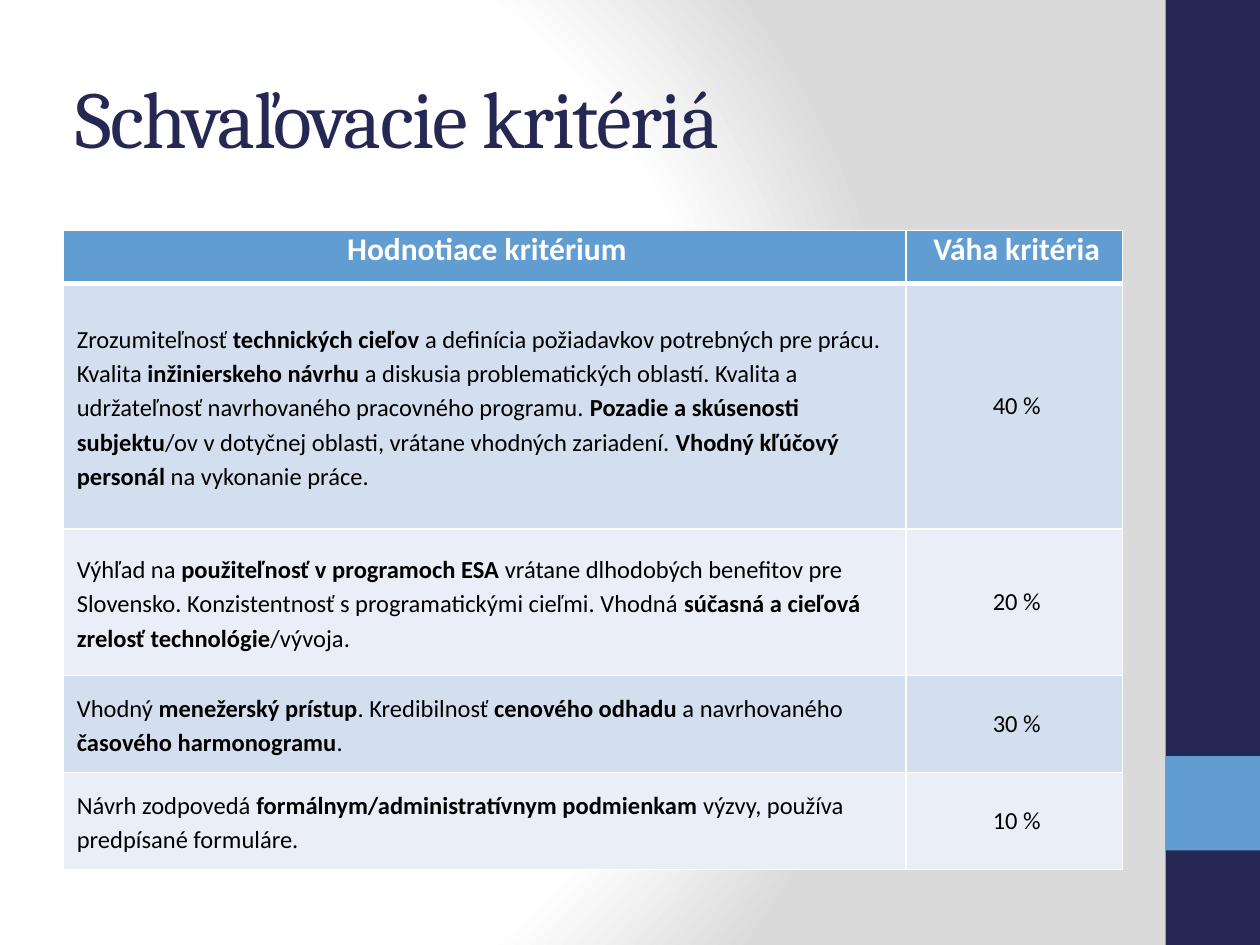
from pptx import Presentation
from pptx.dml.color import RGBColor as RGB
from pptx.enum.shapes import MSO_SHAPE as Shape
from pptx.enum.text import MSO_ANCHOR as Anchor, PP_ALIGN as Align
from pptx.oxml import parse_xml
from pptx.oxml.ns import nsdecls
from pptx.util import Inches, Pt

THEME = {
    "navy": "242852", "blue": "629DD1", "white": "FFFFFF", "black": "000000",
    "grey": "DADADA", "bands": ("D3DFEE", "EAEFF7"),
    "serif": "Cambria", "sans": "Calibri",
    "title": 46, "head": 18, "body": 14,
}

# Asterisks enclose the bold words
ROWS = [
    ("*Hodnotiace kritérium*", "*Váha kritéria*"),
    ("Zrozumiteľnosť *technických cieľov *a definícia požiadavkov potrebných pre prácu. "
     "Kvalita *inžinierskeho návrhu *a diskusia problematických oblastí. Kvalita a "
     "udržateľnosť navrhovaného pracovného programu. *Pozadie a skúsenosti subjektu*"
     "/ov v dotyčnej oblasti, vrátane vhodných zariadení. *Vhodný kľúčový personál *"
     "na vykonanie práce.", "40 %"),
    ("Výhľad na *použiteľnosť v programoch ESA *vrátane dlhodobých benefitov pre "
     "Slovensko. Konzistentnosť s programatickými cieľmi. Vhodná *súčasná a cieľová "
     "zrelosť technológie*/vývoja.", "20 %"),
    ("Vhodný *menežerský prístup*. Kredibilnosť *cenového odhadu* a navrhovaného "
     "*časového harmonogramu*.", "30 %"),
    ("Návrh zodpovedá *formálnym/administratívnym podmienkam *výzvy, používa "
     "predpísané formuláre.", "10 %"),
]
WIDTHS = (26.76, 6.88)
HEIGHTS = (1.68, 7.8, 4.64, 3.08, 3.08)

prs = Presentation()
prs.slide_width, prs.slide_height = Inches(10), Inches(7.5)
UNIT = prs.slide_width / 40  # grid of 40 columns and 30 rows


def grid(*spans):
    return [round(n * UNIT) for n in spans]


def write(para, text, font, size, color):
    for i, part in enumerate(text.split("*")):
        if part:
            run = para.add_run()
            run.text = part
            look = {"name": font, "size": Pt(size), "bold": i % 2 == 1}
            for key, val in look.items():
                setattr(run.font, key, val)
            run.font.color.rgb = RGB.from_string(color)


slide = prs.slides.add_slide(prs.slide_layouts[5])

# Background: round gradient
stops = "".join(
    f'<a:gs pos="{pos}"><a:srgbClr val="{THEME[name]}"/></a:gs>'
    for pos, name in ((0, "white"), (75000, "white"), (100000, "grey")))
slide.element.cSld.insert(0, parse_xml(
    f'<p:bg {nsdecls("p", "a")}><p:bgPr><a:gradFill rotWithShape="1">'
    f'<a:gsLst>{stops}</a:gsLst><a:path path="circle">'
    '<a:fillToRect l="20000" t="50000" r="100000" b="50000"/></a:path>'
    '</a:gradFill><a:effectLst/></p:bgPr></p:bg>'))

# Side bar and its accent
for top, tall, name in ((0, 30, "navy"), (24, 3, "blue")):
    bar = slide.shapes.add_shape(Shape.RECTANGLE, *grid(37, top, 3, tall))
    bar.shadow.inherit = False
    bar.fill.solid()
    bar.fill.fore_color.rgb = RGB.from_string(THEME[name])
    bar.line.fill.background()

# Title, in front of the bars
title = slide.shapes.title
slide.shapes._spTree.append(title._element)
title.left, title.top, title.width, title.height = grid(2, 1.2, 33.32, 5)
frame = title.text_frame
frame.word_wrap = True
frame.vertical_anchor = Anchor.MIDDLE
para = frame.paragraphs[0]
para.alignment = Align.LEFT
write(para, "Schvaľovacie kritériá", THEME["serif"], THEME["title"], THEME["navy"])
para.runs[0].font._element.set("spc", "-100")

# Criteria table
table = slide.shapes.add_table(
    len(ROWS), len(WIDTHS), *grid(2, 7.32, sum(WIDTHS), sum(HEIGHTS))).table
for col, wide in zip(table.columns, grid(*WIDTHS)):
    col.width = wide
for row, tall in zip(table.rows, grid(*HEIGHTS)):
    row.height = tall

for r, texts in enumerate(ROWS):
    head = r == 0
    fill = THEME["blue"] if head else THEME["bands"][(r - 1) % 2]
    size, ink = ("head", "white") if head else ("body", "black")
    for c, text in enumerate(texts):
        cell = table.cell(r, c)
        form = {"margin_left": Inches(0.07), "margin_right": Inches(0.07),
                "margin_top": 0, "margin_bottom": 0,
                "vertical_anchor": Anchor.TOP if head else Anchor.MIDDLE}
        for key, val in form.items():
            setattr(cell, key, val)
        cell.fill.solid()
        cell.fill.fore_color.rgb = RGB.from_string(fill)

        para = cell.text_frame.paragraphs[0]
        prose = c == 0 and not head
        form = {"alignment": Align.LEFT if prose else Align.CENTER,
                "line_spacing": 1.15 if prose else 1.0,
                "space_before": Pt(6), "space_after": Pt(6)}
        for key, val in form.items():
            setattr(para, key, val)
        props = para._p.get_or_add_pPr()
        props.set("marL", str(Inches(0.04)))
        props.set("indent", "0")
        write(para, text, THEME["sans"], THEME[size], THEME[ink])

        # White rules, thicker around the header's lower edge
        for i, side in enumerate("LRTB"):
            thick = (head and side == "B") or (r == 1 and side == "T")
            cell._tc.get_or_add_tcPr().insert(i, parse_xml(
                f'<a:ln{side} {nsdecls("a")} w="{Pt(3 if thick else 1)}"><a:solidFill>'
                f'<a:srgbClr val="{THEME["white"]}"/></a:solidFill></a:ln{side}>'))

prs.save("out.pptx")
